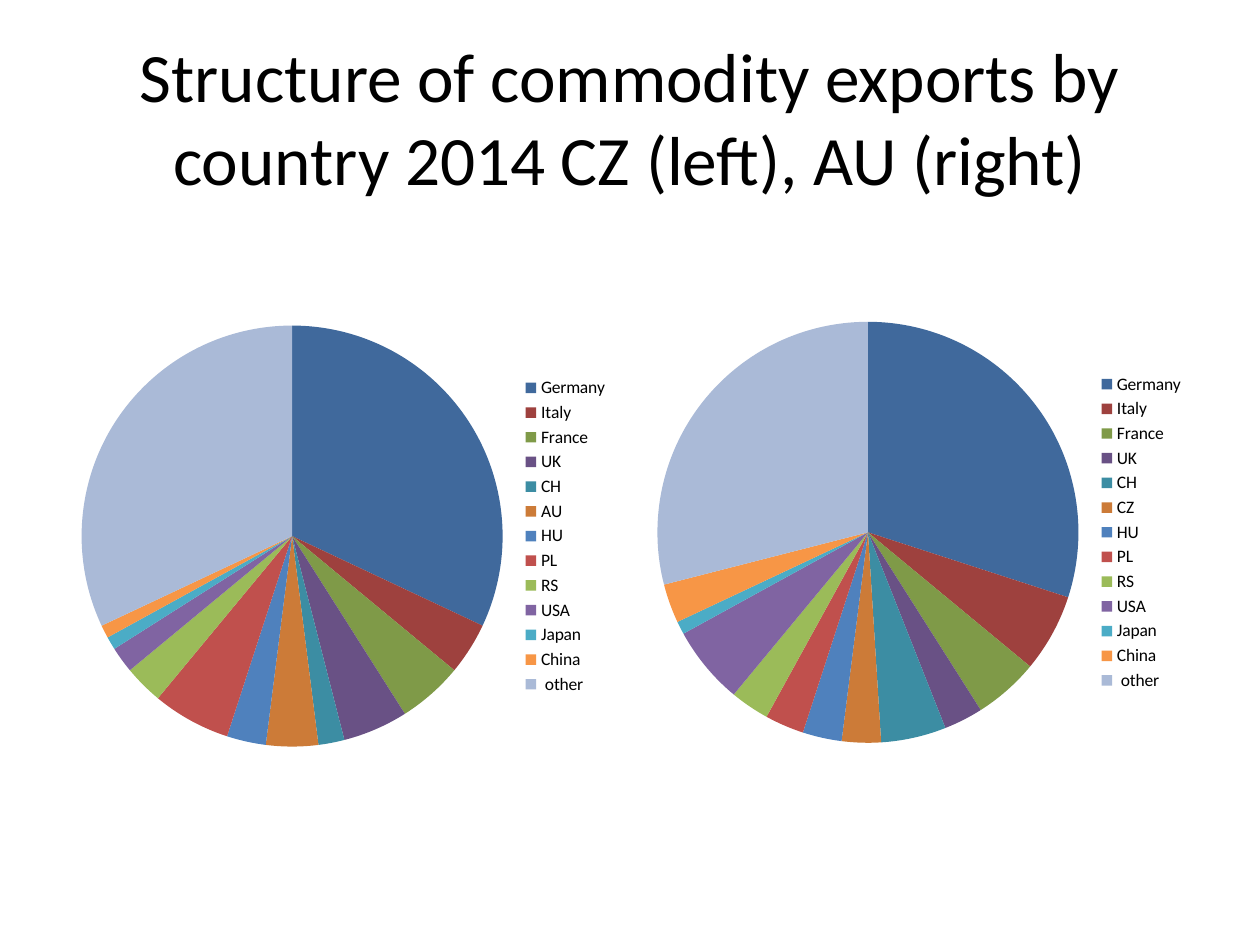
from dataclasses import dataclass

from pptx import Presentation
from pptx.chart.data import CategoryChartData
from pptx.dml.color import RGBColor
from pptx.enum.chart import XL_CHART_TYPE, XL_LEGEND_POSITION
from pptx.enum.text import MSO_ANCHOR, PP_ALIGN
from pptx.util import Inches, Pt

PIE = XL_CHART_TYPE.PIE
RIGHT = XL_LEGEND_POSITION.RIGHT
MIDDLE = MSO_ANCHOR.MIDDLE
CENTER = PP_ALIGN.CENTER


@dataclass(frozen=True)
class Theme:
    """Hold the colours, font and type sizes of the slide."""
    font: str = "Calibri"
    ink: str = "000000"
    title: float = 39.6
    legend: float = 10
    slices: tuple = (
        "40699C", "9E413E", "7F9A48", "695185", "3C8DA3", "CC7B38",
        "4F81BD", "C0504D", "9BBB59", "8064A2", "4BACC6", "F79646",
        "AABAD7",
    )


THEME = Theme()
TITLE = "Structure of commodity exports by country 2014 CZ (left), AU (right)"
TITLE_BOX = (0.5, 0.3, 9, 1.25)
EXPORTS = (
    ("AU", (32, 4, 5, 5, 2, 4, 3, 6, 3, 2, 1, 1, 32), (0.51, 1.78, 4.42, 4.95)),
    ("CZ", (30, 6, 5, 3, 5, 3, 3, 3, 3, 6, 1, 3, 29), (5.08, 1.75, 4.42, 4.95)),
)


def style(font, size):
    """Apply the theme font and ink at the given size."""
    font.name = THEME.font
    font.size = Pt(size)
    font.color.rgb = RGBColor.from_string(THEME.ink)


def add_title(slide, box):
    """Place the slide title in the box."""
    title = slide.shapes.title
    title.left, title.top, title.width, title.height = map(Inches, box)
    frame = title.text_frame
    frame.text = TITLE
    frame.word_wrap = True
    frame.vertical_anchor = MIDDLE
    line = frame.paragraphs[0]
    line.alignment = CENTER
    style(line.runs[0].font, THEME.title)


def add_pie(slide, box, peer, shares):
    """Draw export shares by country as a pie with its legend in the box."""
    data = CategoryChartData()
    data.categories = ["Germany", "Italy", "France", "UK", "CH", peer, "HU",
                       "PL", "RS", "USA", "Japan", "China", " other"]
    data.add_series("Exports", shares)
    chart = slide.shapes.add_chart(PIE, *map(Inches, box), data).chart
    style(chart.font, THEME.legend)
    chart.has_title = False
    chart.has_legend = True
    chart.legend.position = RIGHT
    chart.legend.include_in_layout = False
    plot = chart.plots[0]
    plot.vary_by_categories = True
    for index, color in enumerate(THEME.slices):
        fill = plot.series[0].points[index].format.fill
        fill.solid()
        fill.fore_color.rgb = RGBColor.from_string(color)


def main():
    """Build and save the slide."""
    deck = Presentation()
    deck.slide_width, deck.slide_height = Inches(10), Inches(7.5)
    slide = deck.slides.add_slide(deck.slide_layouts[5])
    add_title(slide, TITLE_BOX)
    for peer, shares, box in EXPORTS:
        add_pie(slide, box, peer, shares)
    deck.save("out.pptx")


if __name__ == "__main__":
    main()
